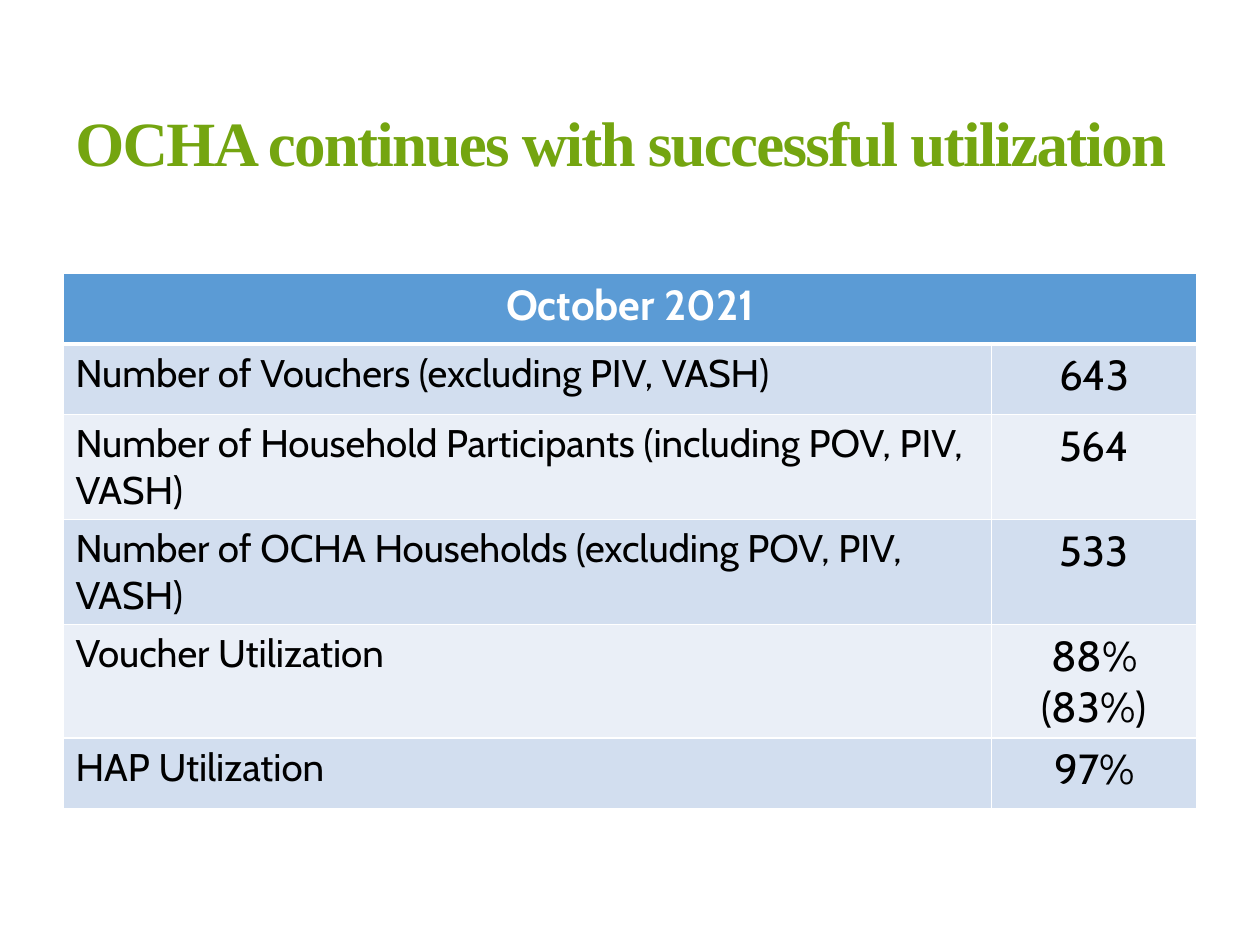
import pptx
import pptx.util
import pptx.dml.color
import pptx.enum.text
import pptx.oxml.ns
import lxml.etree
from pptx.util import Inches, Pt

WHITE, BLACK, GREEN = "FFFFFF", "000000", "74A510"
HEADER_BLUE, DARK_BAND, LIGHT_BAND = "5B9BD5", "D2DEEF", "EAEFF7"
ALIGN = pptx.enum.text.PP_ALIGN


def add_span(para, text, font_name, size, color, bold=False):
    span = para.add_run()
    span.text = text
    span.font.name = font_name
    span.font.size = Pt(size)
    span.font.bold = bold
    span.font.color.rgb = pptx.dml.color.RGBColor.from_string(color)
    return span


def style_cell(cell, fill, top_width, bottom_width):
    """Fill the cell and give it white borders, widths in points."""
    properties = cell._tc.get_or_add_tcPr()
    widths = {"lnL": 1, "lnR": 1, "lnT": top_width, "lnB": bottom_width}
    for side, width in widths.items():
        line = lxml.etree.SubElement(properties, pptx.oxml.ns.qn(f"a:{side}"), w=str(Pt(width)))
        solid = lxml.etree.SubElement(line, pptx.oxml.ns.qn("a:solidFill"))
        lxml.etree.SubElement(solid, pptx.oxml.ns.qn("a:srgbClr"), val=WHITE)
    cell.fill.solid()
    cell.fill.fore_color.rgb = pptx.dml.color.RGBColor.from_string(fill)


deck = pptx.Presentation()
deck.slide_width, deck.slide_height = Inches(10), Inches(7.5)
page = deck.slides.add_slide(deck.slide_layouts[6])

# Title
title_box = page.shapes.add_textbox(Inches(0.5), Inches(0.58), Inches(9), Inches(1.08))
title_box.text_frame.word_wrap = True
title_box.text_frame.vertical_anchor = pptx.enum.text.MSO_ANCHOR.MIDDLE
title = add_span(title_box.text_frame.paragraphs[0],
                 "OCHA continues with successful utilization",
                 "Times New Roman", 36, GREEN, bold=True)
title.font._element.set("spc", "-100")

# Utilization table
measures = [
    ("Number of Vouchers (excluding PIV, VASH)", "643"),
    ("Number of Household Participants (including POV, PIV, VASH)", "564"),
    ("Number of OCHA Households (excluding POV, PIV, VASH)", "533"),
    ("Voucher Utilization", "88% (83%)"),
    ("HAP Utilization", "97%"),
]
row_heights = [0.56, 0.56, 0.58, 0.56, 0.5, 0.56]
table = page.shapes.add_table(len(row_heights), 2, Inches(0.5), Inches(2.17),
                              Inches(9), Inches(sum(row_heights))).table
for column, width in zip(table.columns, (7.37, 1.63)):
    column.width = Inches(width)
for row, height in zip(table.rows, row_heights):
    row.height = Inches(height)

header = table.cell(0, 0)
header.merge(table.cell(0, 1))
for cell in table.rows[0].cells:
    style_cell(cell, HEADER_BLUE, 1, 3)
para = header.text_frame.paragraphs[0]
para.alignment = ALIGN.CENTER
add_span(para, "October 2021", "Cabin", 24, WHITE, bold=True)

for row_index, texts in enumerate(measures, start=1):
    band = DARK_BAND if row_index % 2 else LIGHT_BAND
    for column_index, text in enumerate(texts):
        cell = table.cell(row_index, column_index)
        style_cell(cell, band, 3 if row_index == 1 else 1, 1)
        para = cell.text_frame.paragraphs[0]
        para.alignment = (ALIGN.LEFT, ALIGN.CENTER)[column_index]
        add_span(para, text, "Cabin", (22, 24)[column_index], BLACK)

deck.save("out.pptx")
